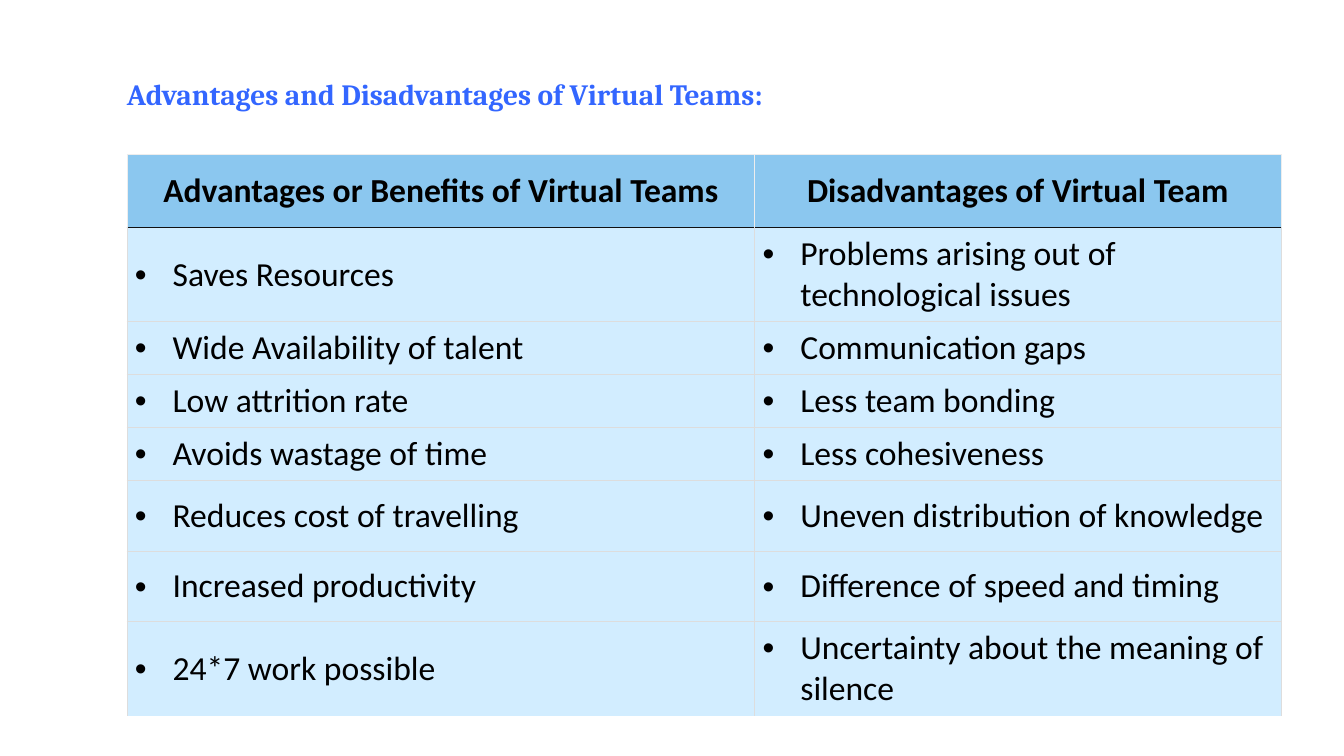
"""Build a slide comparing advantages and disadvantages of virtual teams."""
from lxml import etree
from pptx import Presentation
from pptx import util as u
from pptx.dml.color import RGBColor
from pptx.enum import shapes, text
from pptx.oxml import ns

HEADINGS = ("Advantages or Benefits of Virtual Teams", "Disadvantages of Virtual Team")
POINTS = [
    ("Saves Resources", "Problems arising out of technological issues"),
    ("Wide Availability of talent", "Communication gaps"),
    ("Low attrition rate", "Less team bonding"),
    ("Avoids wastage of time", "Less cohesiveness"),
    ("Reduces cost of travelling", "Uneven distribution of knowledge"),
    ("Increased productivity", "Difference of speed and timing"),
    ("24*7 work possible", "Uncertainty about the meaning of silence"),
]
COLUMN_WIDTHS = (15.82, 13.26)
ROW_HEIGHTS = (1.85, 2.24, 1.04, 1.04, 1.04, 1.78, 1.78, 1.78)


def color(value):
    return RGBColor.from_string(value)


class SlideBuilder:
    heading_fill, point_fill = "8BC7EF", "D2EDFF"
    heading_line, point_line, divider = "EDEDED", "DDDDDD", "111111"
    line_width = u.Pt(0.6)

    def __init__(self, slide):
        self.slide = slide

    def style_text(self, paragraph, font, size, ink, bold):
        for run in paragraph.runs:
            run.font.name = font
            run.font.size = u.Pt(size)
            run.font.bold = bold
            run.font.color.rgb = color(ink)

    def title(self, wording, left, top, width, height):
        banner = self.slide.shapes.add_shape(
            shapes.MSO_SHAPE.RECTANGLE, u.Cm(left), u.Cm(top), u.Cm(width), u.Cm(height))
        banner.shadow.inherit = False
        banner.fill.solid()
        banner.fill.fore_color.rgb = color("FFFFFF")
        banner.line.fill.background()
        frame = banner.text_frame
        frame.text = wording
        frame.word_wrap = True
        frame.vertical_anchor = text.MSO_ANCHOR.MIDDLE
        frame.margin_left = frame.margin_right = 0
        frame.margin_top, frame.margin_bottom = u.Cm(0.53), u.Cm(0.36)
        frame.paragraphs[0].alignment = text.PP_ALIGN.LEFT
        self.style_text(frame.paragraphs[0], "Cambria", 21, "3366FF", True)

    def borders(self, cell, side_colors):
        properties = cell._tc.get_or_add_tcPr()
        for position, (side, ink) in enumerate(side_colors.items()):
            line = etree.Element(ns.qn(f"a:ln{side}"), w=str(self.line_width))
            if ink:
                fill = etree.SubElement(line, ns.qn("a:solidFill"))
                etree.SubElement(fill, ns.qn("a:srgbClr"), val=ink)
            else:
                etree.SubElement(line, ns.qn("a:noFill"))
            properties.insert(position, line)

    def bullet(self, paragraph):
        properties = paragraph._p.get_or_add_pPr()
        indent = u.Cm(0.95)
        properties.set("marL", str(indent))
        properties.set("indent", str(-indent))
        etree.SubElement(properties, ns.qn("a:buFont"), typeface="Arial")
        etree.SubElement(properties, ns.qn("a:buChar"), char="•")

    def cell(self, cell, wording, is_heading, side_colors):
        cell.text_frame.text = wording
        cell.vertical_anchor = text.MSO_ANCHOR.MIDDLE
        side, edge = (0.36, 0.2) if is_heading else (0.2, 0.15)
        cell.margin_left = cell.margin_right = u.Cm(side)
        cell.margin_top = cell.margin_bottom = u.Cm(edge)
        cell.fill.solid()
        cell.fill.fore_color.rgb = color(self.heading_fill if is_heading else self.point_fill)
        paragraph = cell.text_frame.paragraphs[0]
        if is_heading:
            paragraph.alignment = text.PP_ALIGN.CENTER
        else:
            self.bullet(paragraph)
        self.style_text(paragraph, "Calibri", 24, "000000", is_heading)
        self.borders(cell, side_colors)

    def table(self, rows, left, top, widths, heights):
        comparison = self.slide.shapes.add_table(
            len(rows), len(widths), u.Cm(left), u.Cm(top),
            u.Cm(sum(widths)), u.Cm(sum(heights))).table
        comparison.first_row = comparison.horz_banding = False
        for column, width in zip(comparison.columns, widths):
            column.width = u.Cm(width)
        for index, (wordings, height) in enumerate(zip(rows, heights)):
            comparison.rows[index].height = u.Cm(height)
            is_heading = index == 0
            line = self.heading_line if is_heading else self.point_line
            side_colors = {"L": line, "R": line, "T": line, "B": line}
            if is_heading:
                side_colors["B"] = self.divider
            elif index == 1:
                side_colors["T"] = self.divider
            elif index == len(rows) - 1:
                side_colors["B"] = None
            for column, wording in enumerate(wordings):
                self.cell(comparison.cell(index, column), wording, is_heading, side_colors)


def main():
    deck = Presentation()
    deck.slide_width, deck.slide_height = u.Cm(33.87), u.Cm(19.05)
    builder = SlideBuilder(deck.slides.add_slide(deck.slide_layouts[6]))
    builder.table([HEADINGS, *POINTS], 3.2, 3.89, COLUMN_WIDTHS, ROW_HEIGHTS)
    builder.title("Advantages and Disadvantages of Virtual Teams:", 3.2, 1.4, 22.4, 1.78)
    deck.save("out.pptx")


if __name__ == "__main__":
    main()
